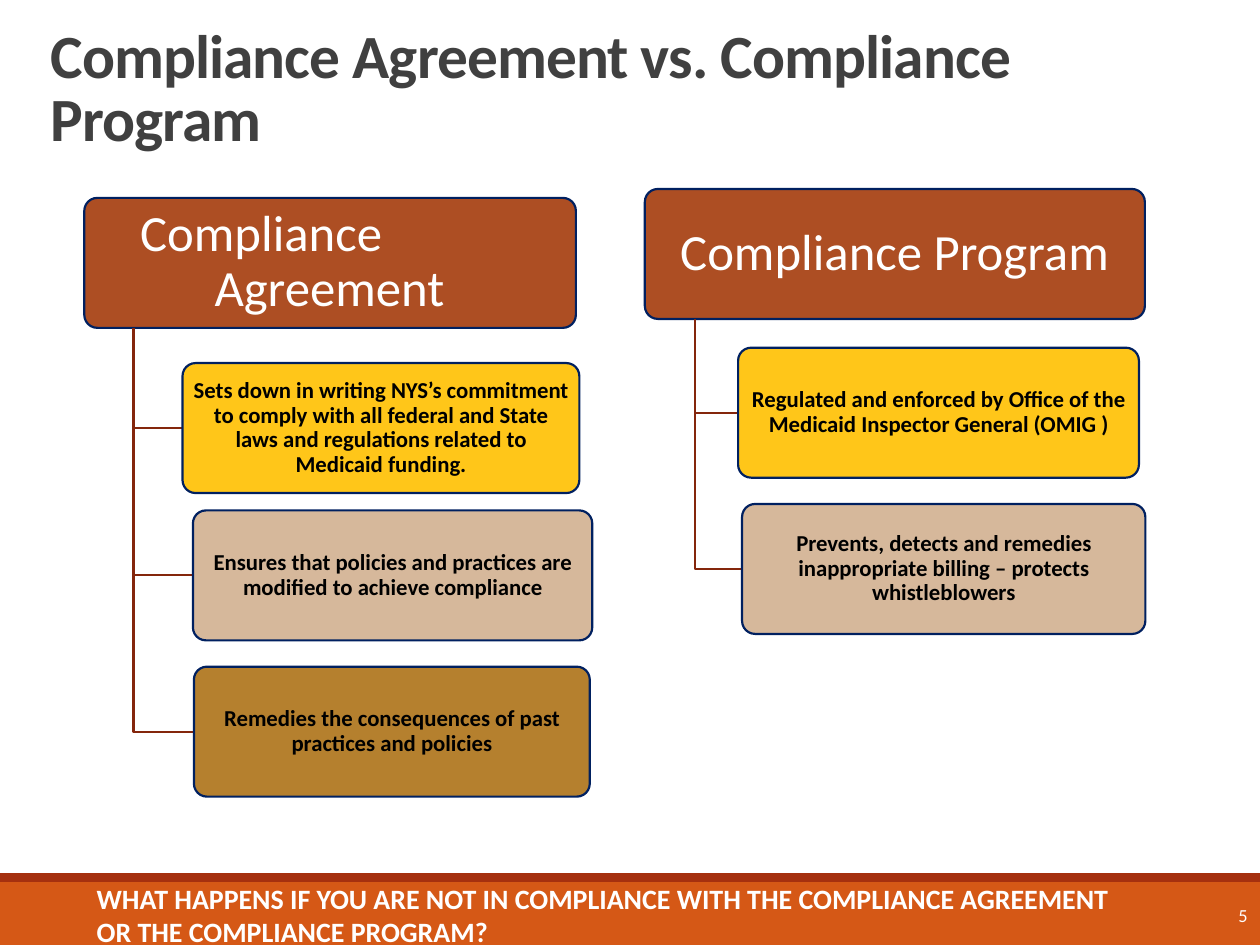
"""Build a slide that compares the compliance agreement with the compliance program."""
from dataclasses import dataclass

import pptx
import pptx.dml.color
import pptx.enum.shapes
import pptx.enum.text
import pptx.oxml.ns
import pptx.util
from lxml import etree

Cm = pptx.util.Cm
Pt = pptx.util.Pt
Kind = pptx.enum.shapes.MSO_SHAPE
Align = pptx.enum.text.PP_ALIGN
Anchor = pptx.enum.text.MSO_ANCHOR


@dataclass(frozen=True)
class Theme:
    face: str = "Calibri"
    dark: str = "404040"
    black: str = "000000"
    white: str = "FFFFFF"
    bar: str = "D55816"
    strip: str = "A5300F"
    head: str = "AD4E23"
    edge: str = "002060"
    stem: str = "84260C"
    gold: str = "FFC000"
    tan: str = "D2B191"
    brown: str = "AD7318"
    title: float = 35.1
    large: float = 29
    foot: float = 16
    small: float = 13
    page: float = 10.5
    line: float = 1.25


THEME = Theme()
BOX_H = 2.62

TREES = [
    (1.7, 3.99, 9.91, "Compliance Agreement", (2.4, -1.5), [
        (3.68, 7.32, 8.0, THEME.gold,
         "Sets down in writing NYS’s commitment to comply with all federal "
         "and State laws and regulations related to Medicaid funding."),
        (3.89, 10.29, 8.05, THEME.tan,
         "Ensures that policies and practices are modified to achieve compliance"),
        (3.91, 13.44, 7.98, THEME.brown,
         "Remedies the consequences of past practices and policies"),
    ]),
    (13.0, 3.81, 10.08, "Compliance Program", None, [
        (14.88, 7.01, 8.08, THEME.gold,
         "Regulated and enforced by Office of the Medicaid Inspector General (OMIG )"),
        (14.96, 10.16, 8.13, THEME.tan,
         "Prevents, detects and remedies inappropriate billing – protects whistleblowers"),
    ]),
]


def rgb(code):
    return pptx.dml.color.RGBColor.from_string(code)


def write(shape, text, size, color, bold=False, align=Align.LEFT,
          anchor=Anchor.MIDDLE, pads=(0.25, 0.13, 0.25, 0.13), space=None):
    frame = shape.text_frame
    frame.word_wrap = True
    frame.vertical_anchor = anchor
    (frame.margin_left, frame.margin_top,
     frame.margin_right, frame.margin_bottom) = map(Cm, pads)
    para = frame.paragraphs[0]
    para.text = text
    para.alignment = align
    para.line_spacing = space
    font = para.font
    font.name, font.size, font.bold = THEME.face, Pt(size), bold
    font.color.rgb = rgb(color)
    return para


def add_text(slide, area, text, size, color, **style):
    return write(slide.shapes.add_textbox(*map(Cm, area)), text, size, color, **style)


def add_band(slide, top, high, color):
    band = slide.shapes.add_shape(Kind.RECTANGLE, 0, Cm(top), Cm(25.4), Cm(high))
    band.shadow.inherit = False
    band.fill.solid()
    band.fill.fore_color.rgb = rgb(color)
    band.line.fill.background()


def add_box(slide, area, fill, alpha=100):
    box = slide.shapes.add_shape(Kind.ROUNDED_RECTANGLE, *map(Cm, area))
    box.adjustments[0] = 0.1
    box.shadow.inherit = False
    box.fill.solid()
    box.fill.fore_color.rgb = rgb(fill)
    box.line.color.rgb = rgb(THEME.edge)
    box.line.width = Pt(THEME.line)
    if alpha < 100:
        qn = pptx.oxml.ns.qn
        tone = box.fill._xPr.find(qn("a:solidFill"))[0]
        etree.SubElement(tone, qn("a:alpha"), val=str(alpha * 1000))
    return box


def add_stem(slide, left, top, right, low):
    path = slide.shapes.build_freeform(Cm(left), Cm(top))
    path.add_line_segments([(Cm(left), Cm(low)), (Cm(right), Cm(low))], close=False)
    stem = path.convert_to_shape()
    stem.shadow.inherit = False
    stem.fill.background()
    stem.line.color.rgb = rgb(THEME.stem)
    stem.line.width = Pt(THEME.line)


def add_tree(slide, left, top, wide, name, hang, leaves):
    head = add_box(slide, (left, top, wide, BOX_H), THEME.head)
    para = write(head, name, THEME.large, THEME.white,
                 align=Align.LEFT if hang else Align.CENTER,
                 pads=(0.15, 0.1, 0.15, 0.1), space=0.9)
    if hang:
        props = para._p.get_or_add_pPr()
        for key, value in zip(("marL", "indent"), hang):
            props.set(key, str(int(Cm(value))))
    for x, y, w, fill, text in leaves:
        add_stem(slide, left + wide / 10, top + BOX_H, x, y + BOX_H / 2)
        leaf = add_box(slide, (x, y, w, BOX_H), fill, alpha=90)
        write(leaf, text, THEME.small, THEME.black, bold=True, align=Align.CENTER,
              pads=(0.08, 0.05, 0.08, 0.05), space=0.9)


def main():
    deck = pptx.Presentation()
    deck.slide_width, deck.slide_height = Cm(25.4), Cm(19.05)
    slide = deck.slides.add_slide(deck.slide_layouts[6])
    add_band(slide, 17.78, 1.27, THEME.bar)
    add_band(slide, 17.6, 0.18, THEME.strip)
    for tree in TREES:
        add_tree(slide, *tree)
    add_text(slide, (1.7, 17.93, 21.59, 1.02),
             "WHAT HAPPENS IF YOU ARE NOT IN COMPLIANCE WITH THE COMPLIANCE "
             "AGREEMENT OR THE COMPLIANCE PROGRAM?",
             THEME.foot, THEME.white, bold=True)
    add_text(slide, (22.66, 17.93, 2.74, 1.02), "5", THEME.page, THEME.white,
             align=Align.RIGHT)
    title = add_text(slide, (0, 0, 24.56, 3.23),
                     "Compliance Agreement vs. Compliance Program",
                     THEME.title, THEME.dark, bold=True, anchor=Anchor.BOTTOM,
                     pads=(1.02, 0.13, 0.25, 0.13), space=0.85)
    title.runs[0]._r.get_or_add_rPr().set("spc", "-50")
    deck.save("out.pptx")


if __name__ == "__main__":
    main()
